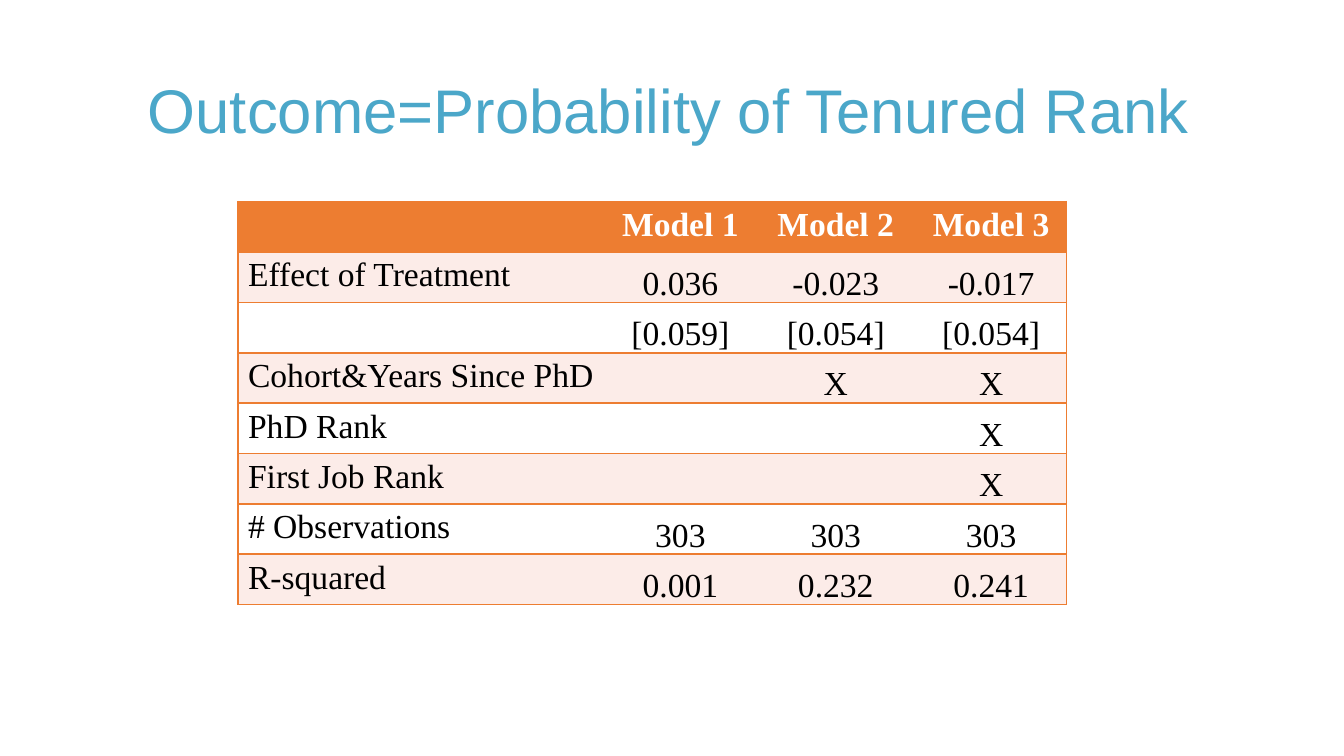
from lxml.etree import SubElement
from pptx import Presentation
from pptx.dml.color import RGBColor
from pptx.enum.text import MSO_ANCHOR, PP_ALIGN
from pptx.oxml.ns import qn
from pptx.util import Pt

BLUE = RGBColor(0x4B, 0xA7, 0xC9)
ORANGE = RGBColor(0xED, 0x7D, 0x31)
PINK = RGBColor(0xFC, 0xEC, 0xE8)
WHITE = RGBColor(0xFF, 0xFF, 0xFF)
BLACK = RGBColor(0, 0, 0)

NO_STYLE_NO_GRID = "{2D5ABB26-0587-4C30-8999-92F81FD0307C}"
COLUMN_WIDTHS = [196.6, 80.9, 85.6, 80.9]
ROW_HEIGHT = 27
ROWS = [
    ["", "Model 1", "Model 2", "Model 3"],
    ["Effect of Treatment", "0.036", "-0.023", "-0.017"],
    ["", "[0.059]", "[0.054]", "[0.054]"],
    ["Cohort&Years Since PhD", "", "X", "X"],
    ["PhD Rank", "", "", "X"],
    ["First Job Rank", "", "", "X"],
    ["# Observations", "303", "303", "303"],
    ["R-squared", "0.001", "0.232", "0.241"],
]


def add_borders(cell, sides):
    """Draw orange lines on the given sides, in the order L, R, T, B."""
    properties = cell._tc.get_or_add_tcPr()
    for side in sides:
        line = SubElement(properties, qn(f"a:ln{side}"), w=str(Pt(1)))
        fill = SubElement(line, qn("a:solidFill"))
        SubElement(fill, qn("a:srgbClr"), val=str(ORANGE))


deck = Presentation()
deck.slide_width, deck.slide_height = Pt(720), Pt(405)
page = deck.slides.add_slide(deck.slide_layouts.get_by_name("Title Only"))

title = page.shapes.title
title.left, title.top, title.width, title.height = Pt(72), Pt(21.6), Pt(598.3), Pt(78.5)
title.text_frame.text = "Outcome=Probability of Tenured Rank"
title.text_frame.vertical_anchor = MSO_ANCHOR.MIDDLE
para = title.text_frame.paragraphs[0]
para.alignment = PP_ALIGN.LEFT
para.line_spacing = 0.9
span = para.runs[0]
span.font.name, span.font.size = "Arial", Pt(33)
span.font.color.rgb = BLUE

frame = page.shapes.add_table(
    len(ROWS), len(COLUMN_WIDTHS), Pt(127.5), Pt(108),
    Pt(sum(COLUMN_WIDTHS)), Pt(ROW_HEIGHT * len(ROWS)))
table = frame.table
table.horz_banding = False
table._tbl.tblPr.find(qn("a:tableStyleId")).text = NO_STYLE_NO_GRID
for column, width in zip(table.columns, COLUMN_WIDTHS):
    column.width = Pt(width)

for row_index, values in enumerate(ROWS):
    table.rows[row_index].height = Pt(ROW_HEIGHT)
    is_header = row_index == 0
    for column_index, value in enumerate(values):
        cell = table.cell(row_index, column_index)
        outer_side = {0: "L", len(values) - 1: "R"}.get(column_index, "")
        add_borders(cell, outer_side + "TB")
        cell.fill.solid()
        cell.fill.fore_color.rgb = ORANGE if is_header else PINK if row_index % 2 else WHITE

        is_label = value and (is_header or column_index == 0)
        cell.margin_left = cell.margin_right = Pt(5.4 if is_label else 0.7)
        cell.margin_top = Pt(2.7 if is_label else 0.7)
        cell.margin_bottom = Pt(2.7 if is_label else 0)
        cell.vertical_anchor = MSO_ANCHOR.TOP if is_label else MSO_ANCHOR.BOTTOM
        if not value:
            continue

        cell.text_frame.text = value
        para = cell.text_frame.paragraphs[0]
        para.alignment = PP_ALIGN.CENTER if column_index else PP_ALIGN.LEFT
        span = para.runs[0]
        span.font.name, span.font.size = "Times New Roman", Pt(18)
        span.font.bold = is_header
        span.font.color.rgb = WHITE if is_header else BLACK

deck.save("out.pptx")
